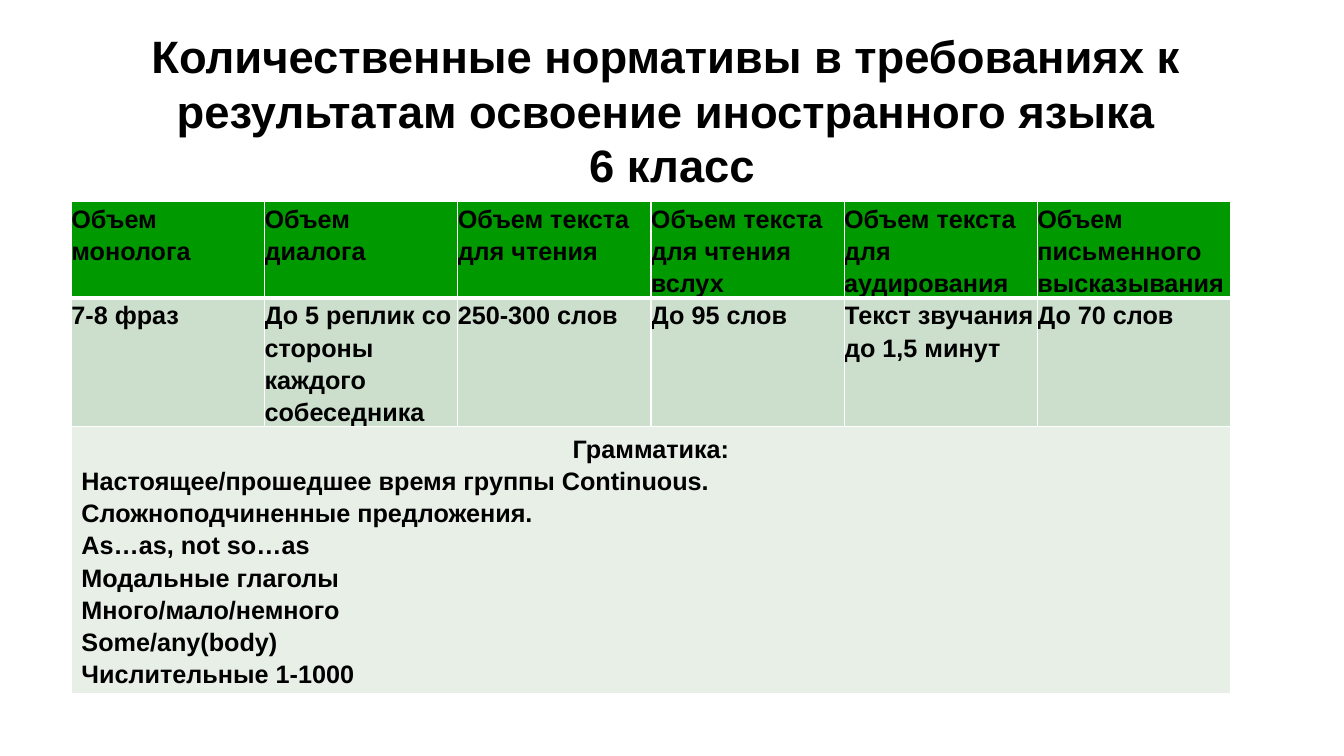
from lxml import etree
from pptx import Presentation
from pptx.dml.color import RGBColor
from pptx.enum import text
from pptx.oxml import ns
from pptx.util import Pt

COLORS = {
    "text": "000000",
    "border": "FFFFFF",
    "header": "009900",
    "norms": "CCDECC",
    "grammar": "E7EFE7",
}
TITLE = (
    "Количественные нормативы в требованиях к \v"
    "результатам освоение иностранного языка \v"
    "6 класс"
)
NORMS = [
    ("Объем монолога", "7-8 фраз"),
    ("Объем диалога", "До 5 реплик со стороны каждого собеседника"),
    ("Объем текста для чтения", "250-300 слов"),
    ("Объем текста для чтения вслух", "До 95 слов"),
    ("Объем текста для аудирования", "Текст звучания до 1,5 минут"),
    ("Объем письменного высказывания", "До 70 слов"),
]
GRAMMAR = [
    "Настоящее/прошедшее время группы Continuous.",
    "Сложноподчиненные предложения.",
    "As…as, not so…as",
    "Модальные глаголы",
    "Много/мало/немного",
    "Some/any(body)",
    "Числительные 1-1000",
]
COLUMN_WIDTH, ROW_HEIGHT = 138, 30


def write(paragraph, content, size=18, align=None, spacing=None):
    paragraph.text = content
    paragraph.alignment = align
    paragraph.line_spacing = spacing
    font = paragraph.font
    font.name = "Arial"
    font.size = Pt(size)
    font.bold = True
    font.color.rgb = RGBColor.from_string(COLORS["text"])


def write_cell(cell, content, align=None):
    write(cell.text_frame.paragraphs[0], content, align=align, spacing=1.14)


def style_cell(cell, fill, bottom=1):
    """Draw the four borders, then fill the cell."""
    properties = cell._tc.get_or_add_tcPr()
    for side, width in (("L", 1), ("R", 1), ("T", 1), ("B", bottom)):
        line = etree.SubElement(properties, ns.qn(f"a:ln{side}"), w=str(Pt(width)))
        solid = etree.SubElement(line, ns.qn("a:solidFill"))
        etree.SubElement(solid, ns.qn("a:srgbClr"), val=COLORS["border"])
    cell.fill.solid()
    cell.fill.fore_color.rgb = RGBColor.from_string(COLORS[fill])


def remove_margins(cell):
    cell.margin_left = cell.margin_right = cell.margin_top = cell.margin_bottom = 0


def add_title(slide):
    title = slide.shapes.title
    title.left, title.top, title.width, title.height = Pt(48), Pt(20), Pt(864), Pt(117)
    frame = title.text_frame
    frame.auto_size = text.MSO_AUTO_SIZE.NONE
    frame.vertical_anchor = text.MSO_ANCHOR.MIDDLE
    write(frame.paragraphs[0], TITLE, size=32.4, align=text.PP_ALIGN.CENTER)


def add_norms_table(slide):
    columns = len(NORMS)
    table = slide.shapes.add_table(
        3, columns, Pt(51), Pt(144), Pt(columns * COLUMN_WIDTH), Pt(3 * ROW_HEIGHT)
    ).table
    for column, (heading, norm) in enumerate(NORMS):
        header, value, grammar = (table.cell(row, column) for row in range(3))
        style_cell(header, "header", bottom=3)
        style_cell(value, "norms")
        style_cell(grammar, "grammar")
        for cell, content in ((header, heading), (value, norm)):
            remove_margins(cell)
            write_cell(cell, content)

    grammar = table.cell(2, 0)
    grammar.merge(table.cell(2, columns - 1))
    write_cell(grammar, "Грамматика:", align=text.PP_ALIGN.CENTER)
    for topic in GRAMMAR:
        write(grammar.text_frame.add_paragraph(), topic, spacing=1.14)


def main():
    presentation = Presentation()
    presentation.slide_width, presentation.slide_height = Pt(960), Pt(540)
    slide = presentation.slides.add_slide(presentation.slide_layouts[5])
    add_title(slide)
    add_norms_table(slide)
    presentation.save("out.pptx")


if __name__ == "__main__":
    main()
